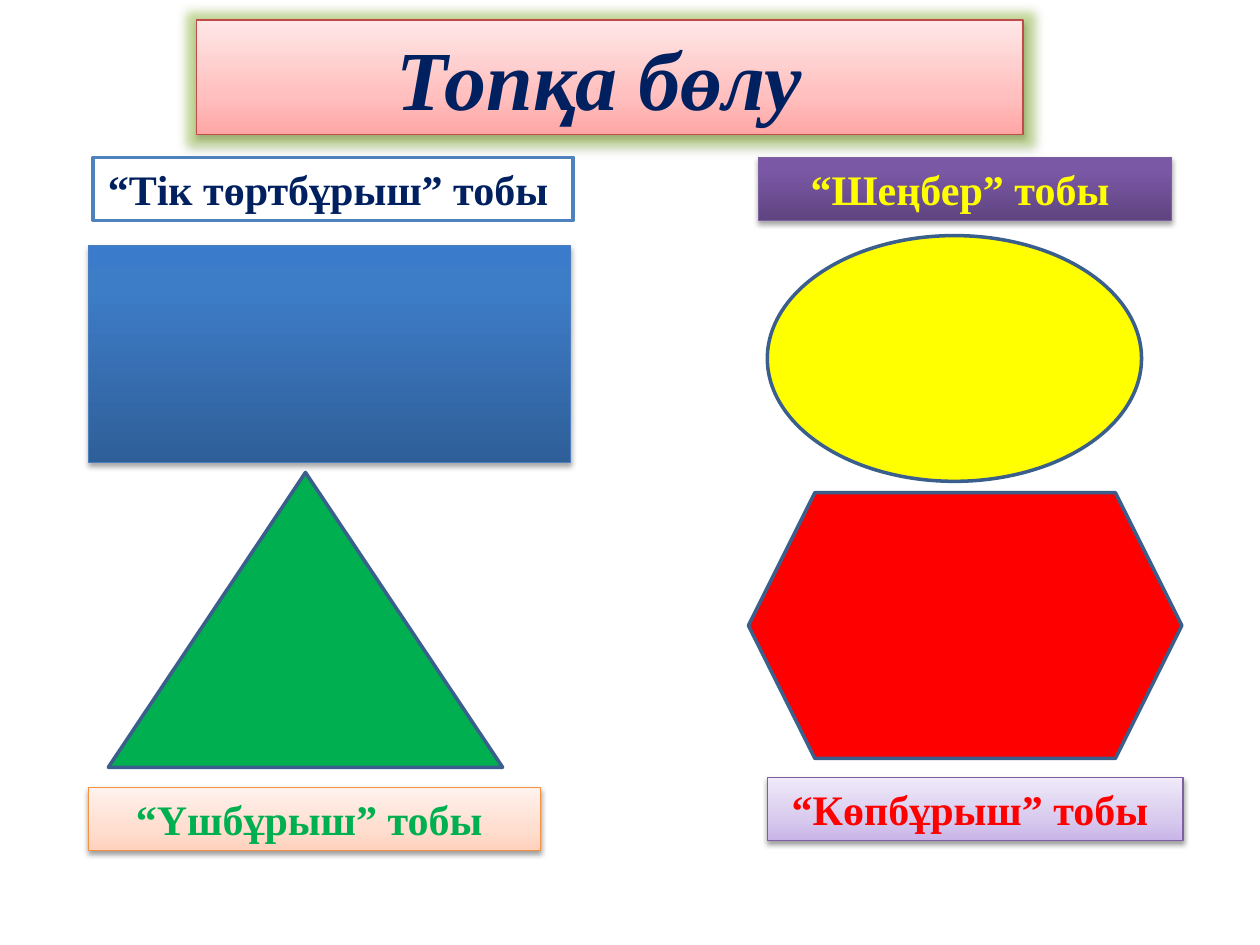
from copy import deepcopy

from lxml import etree
from pptx import Presentation
from pptx.dml.color import RGBColor
from pptx.enum.shapes import MSO_SHAPE
from pptx.enum.text import MSO_ANCHOR, MSO_AUTO_SIZE, PP_ALIGN
from pptx.oxml.ns import qn
from pptx.util import Inches, Pt

RECTANGLE = MSO_SHAPE.RECTANGLE
FONT = "Times New Roman"
OUTLINE = "3A5F8C"
SOFT = {"stops": (0, 0.35, 1), "opacity": 38, "distance": 1.6}
INTENSE = {"stops": (0, 0.8, 1), "opacity": 35, "distance": 1.8}

TITLE = {
    "text": "Топқа бөлу ", "box": (1.56, 0.16, 6.56, 0.91), "color": "002060",
    "colors": ("FFA6A5", "FFC0BF", "FFE7E7"), "line": "BF4C48",
}
FIGURES = [
    (RECTANGLE, (0.7, 1.95, 3.83, 1.72), ("2F5F99", "3D7CC7", "3A7CCB"), "4B7EBC", 0.75, INTENSE),
    (MSO_SHAPE.OVAL, (6.09, 1.87, 2.97, 1.95), ("FFFF00",), OUTLINE, 2, None),
    (MSO_SHAPE.ISOSCELES_TRIANGLE, (0.86, 3.75, 3.13, 2.34), ("00B050",), OUTLINE, 2, None),
    (MSO_SHAPE.HEXAGON, (5.94, 3.91, 3.44, 2.11), ("FF0000",), OUTLINE, 2, None),
]
LABELS = [
    ("“Шеңбер” тобы ", "FFFF00", (6.02, 1.25, 3.28, 0.5),
     ("5F4480", "7B58A6", "7C57A8"), "7D60A0", 0.75, INTENSE),
    ("“Тік төртбұрыш” тобы ", "002060", (0.74, 1.25, 3.81, 0.5),
     ("FFFFFF",), "4F81BD", 2, None),
    ("“Үшбұрыш” тобы ", "00B050", (0.7, 6.25, 3.59, 0.5),
     ("FFD2BD", "FFDED0", "FFF2ED"), "F69240", 0.75, SOFT),
    ("“Көпбұрыш” тобы ", "FF0000", (6.09, 6.17, 3.3, 0.5),
     ("C9B5E8", "D8CBEE", "F0EAF9"), "7D60A0", 0.75, SOFT),
]


def rgb(value):
    return RGBColor.from_string(value)


def add_effect(shape, tag, color, opacity, **attributes):
    effects = shape._element.spPr.find(qn("a:effectLst"))
    effect = etree.SubElement(effects, qn(tag), {k: str(v) for k, v in attributes.items()})
    tint = etree.SubElement(effect, qn("a:srgbClr"), val=color)
    etree.SubElement(tint, qn("a:alpha"), val=str(opacity * 1000))


def add_shadow(shape, style):
    add_effect(shape, "a:outerShdw", "000000", style["opacity"], blurRad=Pt(3.1),
               dist=Pt(style["distance"]), dir=5400000, rotWithShape=0)


def paint(shape, colors, line, width, style):
    if style:
        shape.fill.gradient()
        shape.fill.gradient_angle = 90
        stop_list = shape._element.spPr.find(".//" + qn("a:gsLst"))
        stop_list.append(deepcopy(stop_list[0]))
        for stop, color, position in zip(shape.fill.gradient_stops, colors, style["stops"]):
            stop.color.rgb = rgb(color)
            stop.position = position
    else:
        shape.fill.solid()
        shape.fill.fore_color.rgb = rgb(colors[0])
    shape.line.color.rgb = rgb(line)
    shape.line.width = Pt(width)
    shape.shadow.inherit = False


def write_text(shape, text, size, color, italic=False, wrap=True):
    frame = shape.text_frame
    frame.word_wrap = wrap
    frame.auto_size = MSO_AUTO_SIZE.SHAPE_TO_FIT_TEXT
    frame.vertical_anchor = MSO_ANCHOR.TOP
    paragraph = frame.paragraphs[0]
    paragraph.alignment = PP_ALIGN.CENTER
    run = paragraph.add_run()
    run.text = text
    run.font.name = FONT
    run.font.size = Pt(size)
    run.font.bold = True
    run.font.italic = italic
    run.font.color.rgb = rgb(color)


def add_figure(slide, kind, box, colors, line, width, style):
    shape = slide.shapes.add_shape(kind, *map(Inches, box))
    paint(shape, colors, line, width, style)
    if style:
        add_shadow(shape, style)
    return shape


def main():
    presentation = Presentation()
    presentation.slide_width = Inches(10)
    presentation.slide_height = Inches(7.5)
    slide = presentation.slides.add_slide(presentation.slide_layouts[5])

    title = slide.shapes.title
    title.left, title.top, title.width, title.height = map(Inches, TITLE["box"])
    paint(title, TITLE["colors"], TITLE["line"], 0.75, SOFT)
    add_effect(title, "a:glow", "99CC33", 40, rad=Inches(0.15))
    add_shadow(title, SOFT)
    write_text(title, TITLE["text"], 48, TITLE["color"], italic=True)

    for figure in FIGURES:
        add_figure(slide, *figure)
    for text, color, box, colors, line, width, style in LABELS:
        label = add_figure(slide, RECTANGLE, box, colors, line, width, style)
        write_text(label, text, 24, color, wrap=style is not None)

    presentation.save("out.pptx")


if __name__ == "__main__":
    main()
